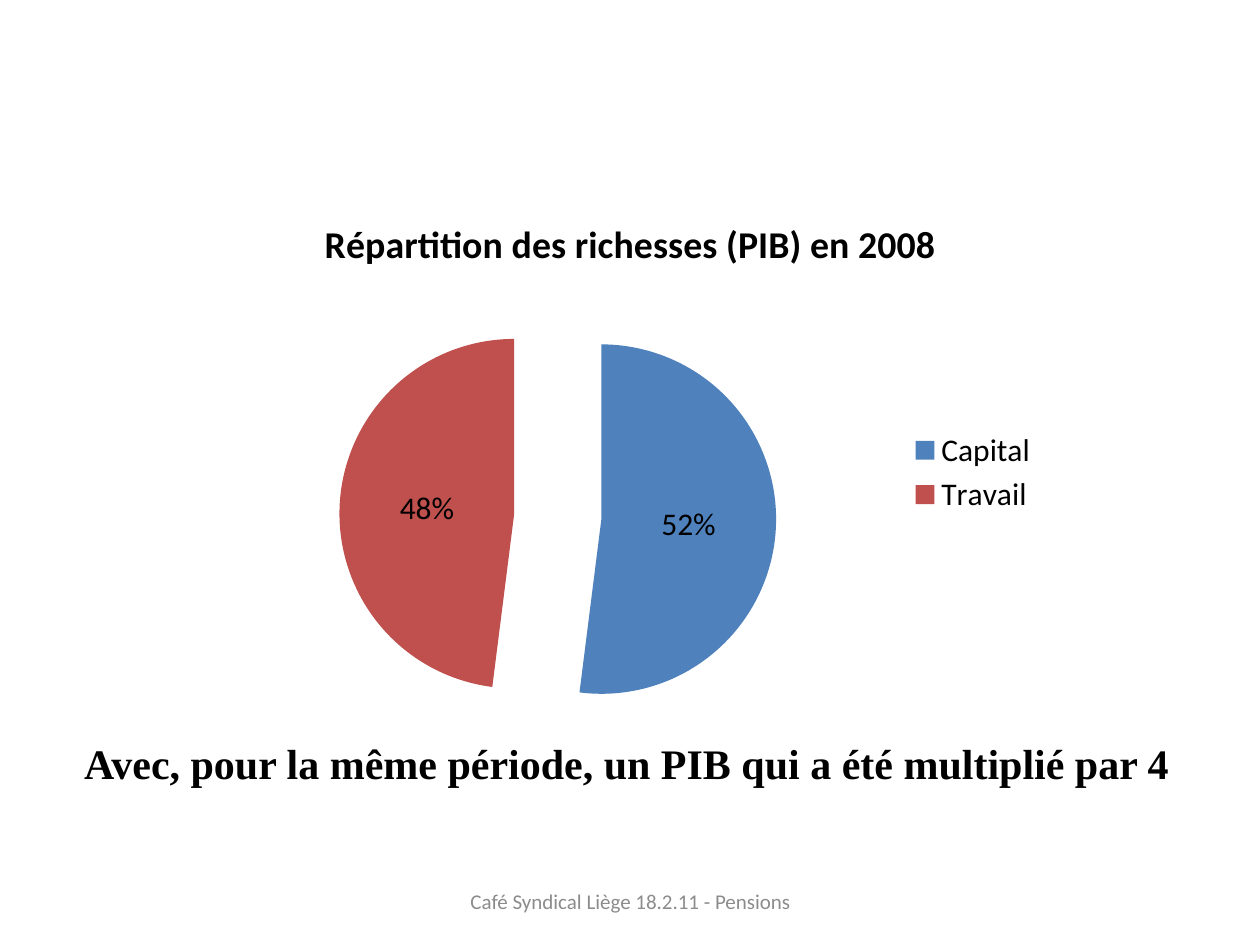
from lxml import etree
from pptx import Presentation
from pptx.chart.data import CategoryChartData
from pptx.dml.color import RGBColor
from pptx.enum import chart as ch, text
from pptx.oxml.ns import qn
from pptx.util import Inches, Pt

BLACK = RGBColor(0x00, 0x00, 0x00)
GREY = RGBColor(0x8C, 0x8C, 0x8C)
BLUE = RGBColor(0x4F, 0x81, 0xBD)
RED = RGBColor(0xC0, 0x50, 0x4D)

SHARES = {"Capital": (52, BLUE), "Travail": (48, RED)}
EXPLOSION = 25


def format_font(font, color=BLACK, **values):
    for name, value in values.items():
        setattr(font, name, value)
    font.color.rgb = color


def add_text(slide, words, box, align, anchor, **font_values):
    frame = slide.shapes.add_textbox(*map(Inches, box)).text_frame
    frame.word_wrap = True
    frame.vertical_anchor = anchor
    paragraph = frame.paragraphs[0]
    paragraph.alignment = align
    run = paragraph.add_run()
    run.text = words
    format_font(run.font, **font_values)


def explode(series, percent):
    """Pull all slices apart; the element belongs right after the series name."""
    explosion = etree.Element(qn("c:explosion"), val=str(percent))
    series._element.find(qn("c:tx")).addnext(explosion)


def add_wealth_pie(slide, title, box):
    data = CategoryChartData()
    data.categories = list(SHARES)
    data.add_series("Series 1", [share for share, _ in SHARES.values()])
    pie = slide.shapes.add_chart(
        ch.XL_CHART_TYPE.PIE, *map(Inches, box), data).chart
    format_font(pie.font, name="Calibri", size=Pt(18))

    # Title and legend
    pie.has_title = True
    heading = pie.chart_title.text_frame
    heading.text = title
    format_font(heading.paragraphs[0].runs[0].font,
                name="Calibri", size=Pt(21.6), bold=True)
    pie.has_legend = True
    pie.legend.position = ch.XL_LEGEND_POSITION.RIGHT
    pie.legend.include_in_layout = False

    # Slices and their percentages
    plot = pie.plots[0]
    plot.vary_by_categories = True
    wealth = plot.series[0]
    explode(wealth, EXPLOSION)
    for index, (_, color) in enumerate(SHARES.values()):
        fill = wealth.points[index].format.fill
        fill.solid()
        fill.fore_color.rgb = color
    labels = wealth.data_labels
    label_format = {"show_percentage": True, "show_value": False,
                    "number_format": "0%", "number_format_is_linked": False,
                    "position": ch.XL_LABEL_POSITION.CENTER}
    for name, value in label_format.items():
        setattr(labels, name, value)
    format_font(labels.font, name="Calibri", size=Pt(18))


def main():
    deck = Presentation()
    deck.slide_width, deck.slide_height = Inches(10), Inches(7.5)
    slide = deck.slides.add_slide(deck.slide_layouts[6])

    add_wealth_pie(slide, "Répartition des richesses (PIB) en 2008",
                   (1.67, 1.53, 6.67, 4.44))
    # Comment under the chart
    add_text(slide, "Avec, pour la même période, un PIB qui a été multiplié par 4",
             (0.57, 5.8, 9.29, 0.79), text.PP_ALIGN.LEFT, text.MSO_ANCHOR.TOP,
             name="Times New Roman", size=Pt(24), bold=True)
    # Footer
    add_text(slide, "Café Syndical Liège 18.2.11 - Pensions",
             (3.42, 6.95, 3.17, 0.4), text.PP_ALIGN.CENTER, text.MSO_ANCHOR.MIDDLE,
             color=GREY, name="Calibri", size=Pt(12))

    deck.save("out.pptx")


if __name__ == "__main__":
    main()
